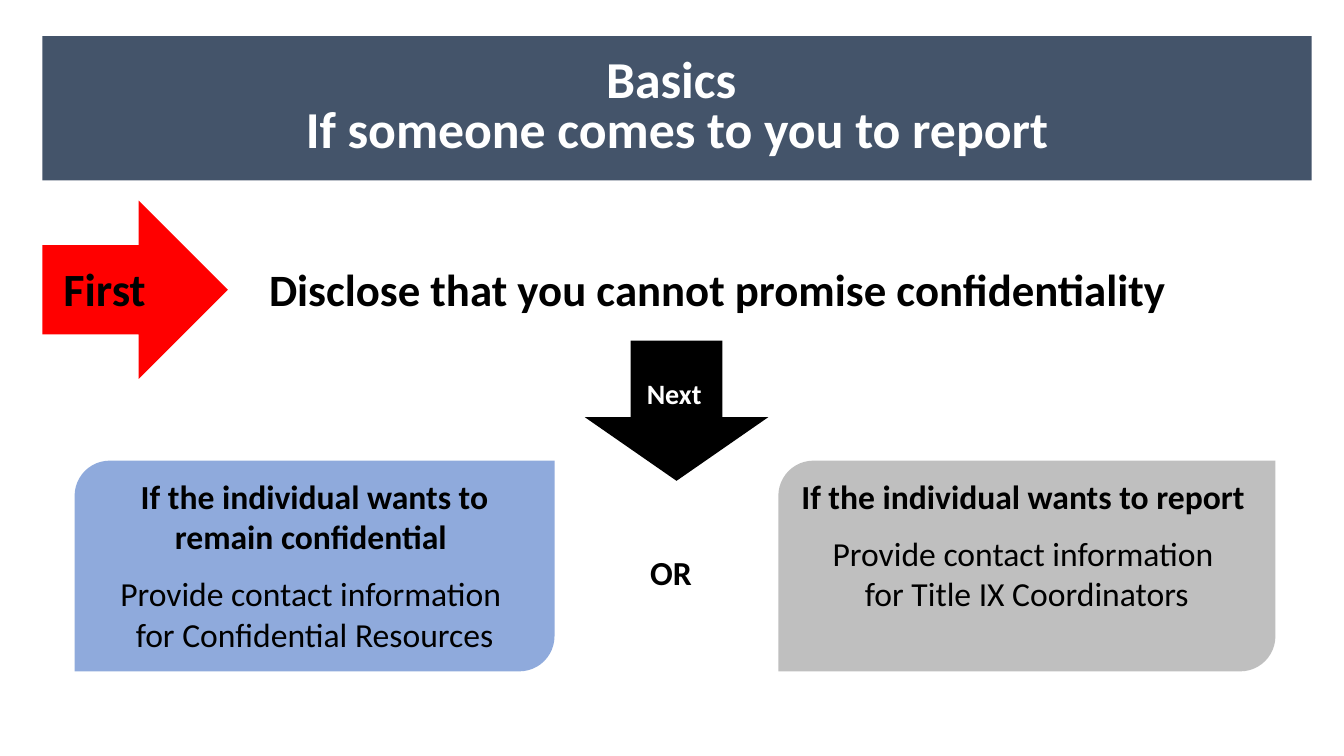
import pptx
import pptx.util
import pptx.dml.color
import pptx.enum.shapes
import pptx.enum.text
from dataclasses import dataclass

Inches = pptx.util.Inches
SHAPES = pptx.enum.shapes.MSO_SHAPE
ANCHOR = pptx.enum.text.MSO_ANCHOR
ALIGN = pptx.enum.text.PP_ALIGN


@dataclass(frozen=True)
class Theme:
    font: str = "Calibri"
    navy: str = "44546A"
    red: str = "FF0000"
    blue: str = "8FAADC"
    grey: str = "BFBFBF"
    black: str = "000000"
    white: str = "FFFFFF"
    title: int = 37
    first: int = 33
    statement: int = 32
    body: int = 24
    next: int = 20
    card_gap: int = 12


THEME = Theme()

TITLE = ["Basics ", "If someone comes to you to report"]
FIRST = "First"
STATEMENT = "Disclose that you cannot promise confidentiality"
NEXT = "Next"
OR = "OR"
CARDS = [
    {"left": 0.74, "width": 4.76, "fill": THEME.blue,
     "heading": "If the individual wants to remain confidential ",
     "lines": ["Provide contact information ", "for Confidential Resources"]},
    {"left": 7.72, "width": 4.93, "fill": THEME.grey,
     "heading": "If the individual wants to report ",
     "lines": ["Provide contact information ", "for Title IX Coordinators"]},
]
CARD_TOP, CARD_HEIGHT = 4.57, 2.09


def add_block(slide, kind, box, fill):
    shape = slide.shapes.add_shape(kind, *map(Inches, box))
    shape.shadow.inherit = False
    shape.fill.solid()
    shape.fill.fore_color.rgb = pptx.dml.color.RGBColor.from_string(fill)
    shape.line.fill.background()
    return shape


def write(shape, lines, size, color=THEME.black, align=ALIGN.LEFT,
          anchor=ANCHOR.TOP, left=0.1, top=0.05):
    """Fill the shape with bold paragraphs; left and top are text margins in inches."""
    frame = shape.text_frame
    frame.word_wrap = True
    frame.vertical_anchor = anchor
    frame.margin_left, frame.margin_top = Inches(left), Inches(top)
    frame.text = "\n".join(lines)
    for paragraph in frame.paragraphs:
        paragraph.alignment = align
        font = paragraph.font
        font.name, font.size, font.bold = THEME.font, pptx.util.Pt(size), True
        font.color.rgb = pptx.dml.color.RGBColor.from_string(color)
    return frame.paragraphs


def add_card(slide, card):
    box = (card["left"], CARD_TOP, card["width"], CARD_HEIGHT)
    shape = add_block(slide, SHAPES.ROUND_2_DIAG_RECTANGLE, box, card["fill"])
    heading, *details = write(shape, [card["heading"], *card["lines"]],
                              THEME.body, align=ALIGN.CENTER)
    for paragraph in details:
        paragraph.font.bold = False
    details[0].space_before = pptx.util.Pt(THEME.card_gap)


def main():
    presentation = pptx.Presentation()
    presentation.slide_width = Inches(13.33)
    presentation.slide_height = Inches(7.5)
    slide = presentation.slides.add_slide(presentation.slide_layouts[6])

    banner = add_block(slide, SHAPES.RECTANGLE, (0.42, 0.36, 12.59, 1.43), THEME.navy)
    for paragraph in write(banner, TITLE, THEME.title, THEME.white,
                           ALIGN.CENTER, ANCHOR.MIDDLE):
        paragraph.line_spacing = 0.8

    statement = slide.shapes.add_textbox(*map(Inches, (2.57, 2.41, 10.3, 0.93)))
    write(statement, [STATEMENT], THEME.statement, top=0.19)

    for card in CARDS:
        add_card(slide, card)

    first_arrow = add_block(slide, SHAPES.RIGHT_ARROW, (0.42, 1.99, 1.84, 1.77), THEME.red)
    write(first_arrow, [FIRST], THEME.first, left=0.21, top=0.15)

    next_arrow = add_block(slide, SHAPES.DOWN_ARROW, (5.8, 3.38, 1.82, 1.39), THEME.black)
    next_arrow.adjustments[1] = 0.454
    write(next_arrow, [NEXT], THEME.next, THEME.white, left=0.16, top=0.36)

    choice = slide.shapes.add_textbox(*map(Inches, (6.35, 5.43, 1.02, 0.5)))
    write(choice, [OR], THEME.body)

    presentation.save("out.pptx")


if __name__ == "__main__":
    main()
